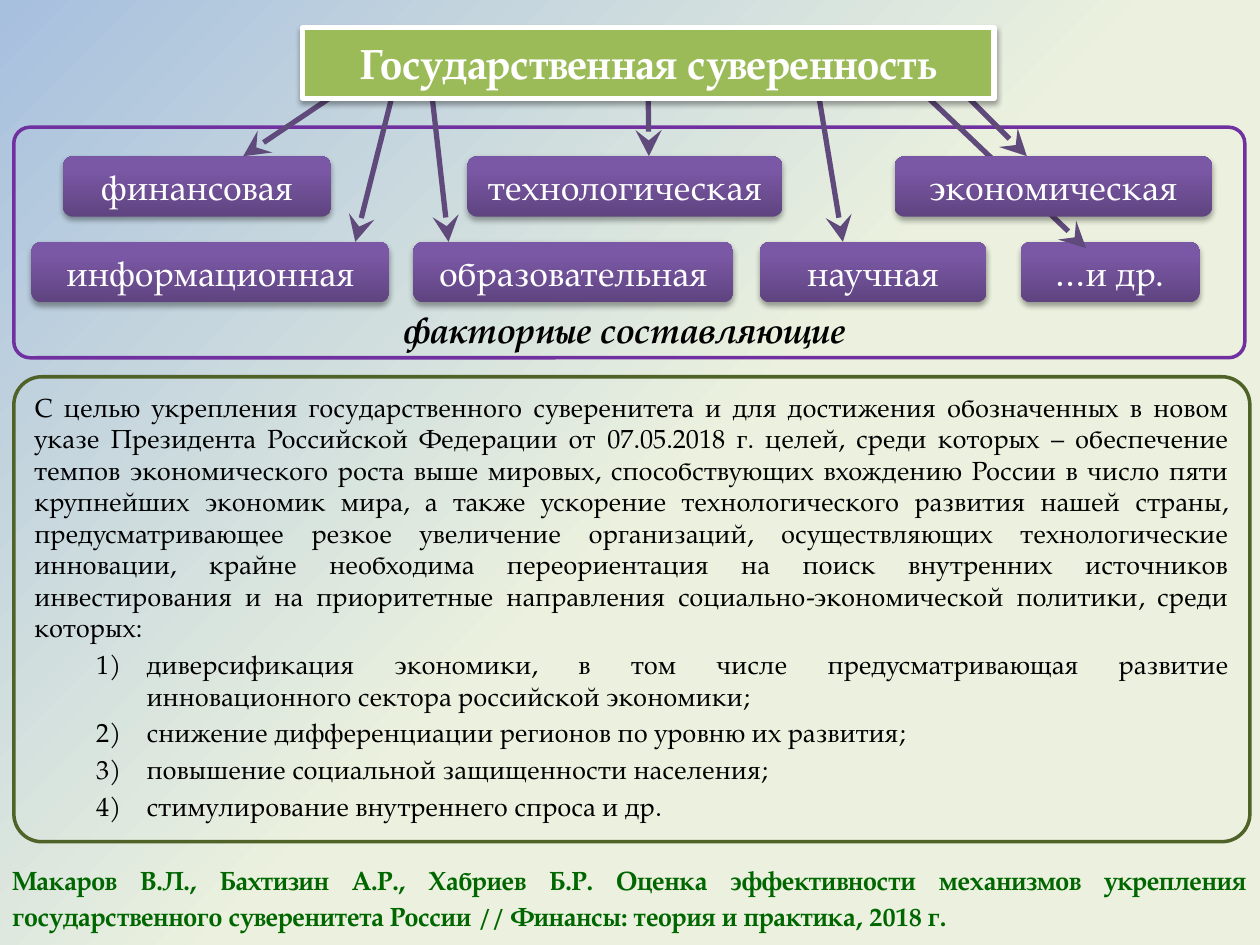
import pptx
import pptx.dml.color
import pptx.enum.shapes
import pptx.enum.text
import pptx.oxml.ns
import pptx.util

RGBColor = pptx.dml.color.RGBColor
SHAPE = pptx.enum.shapes.MSO_SHAPE
ALIGN = pptx.enum.text.PP_ALIGN
ANCHOR = pptx.enum.text.MSO_ANCHOR

WHITE = RGBColor(0xFF, 0xFF, 0xFF)
BLACK = RGBColor(0x00, 0x00, 0x00)
SKY = RGBColor(0xA7, 0xC0, 0xDE)
CREAM = RGBColor(0xEB, 0xF1, 0xDE)
GREEN = RGBColor(0x9B, 0xBB, 0x59)
OLIVE = RGBColor(0x4F, 0x62, 0x28)
CITATION = RGBColor(0x00, 0x66, 0x00)
VIOLET = RGBColor(0x70, 0x30, 0xA0)
PURPLE_DARK = RGBColor(0x5F, 0x44, 0x80)
PURPLE_LIGHT = RGBColor(0x7B, 0x58, 0xA6)
ARROW = RGBColor(0x60, 0x4A, 0x7B)

TITLE_BOTTOM, UPPER, LOWER = 7.7, 12.4, 19.2
FACTORS = [
    ("финансовая", 5, UPPER, 21.3),
    ("технологическая", 37.1, UPPER, 25),
    ("информационная", 2.5, LOWER, 28.4),
    ("образовательная", 32.8, LOWER, 25.4),
    ("научная", 60.3, LOWER, 18),
    ("…и др.", 81, LOWER, 14.2),
]
ARROWS = [
    (26.3, 19.3, UPPER),
    (31.1, 28.2, LOWER),
    (76.8, 81.5, UPPER),
    (65, 66.9, LOWER),
    (34.3, 35.6, LOWER),
    (73.6, 86.2, 19.7),
]
GOAL = (
    "С целью укрепления государственного суверенитета и для достижения обозначенных "
    "в новом указе Президента Российской Федерации от 07.05.2018 г. целей, среди которых "
    "– обеспечение темпов экономического роста выше мировых, способствующих вхождению "
    "России в число пяти крупнейших экономик мира, а также ускорение технологического "
    "развития нашей страны, предусматривающее резкое увеличение организаций, "
    "осуществляющих технологические инновации, крайне необходима переориентация на поиск "
    "внутренних источников инвестирования и на приоритетные направления "
    "социально-экономической политики, среди которых:"
)
DIRECTIONS = [
    "диверсификация экономики, в том числе предусматривающая развитие "
    "инновационного сектора российской экономики;",
    "снижение дифференциации регионов по уровню их развития;",
    "повышение социальной защищенности населения;",
    "стимулирование внутреннего спроса и др.",
]
SOURCE = (
    "Макаров В.Л., Бахтизин А.Р., Хабриев Б.Р. Оценка эффективности механизмов укрепления "
    "государственного суверенитета России // Финансы: теория и практика, 2018 г."
)


class Deck:
    """Holds the style and the current slide, measured on a 100 by 75 grid."""

    font = "TeX Gyre Pagella"
    cols, rows = 100, 75

    def __init__(self):
        self.prs = pptx.Presentation()
        self.prs.slide_width = pptx.util.Inches(10)
        self.prs.slide_height = pptx.util.Inches(7.5)
        self.s = self.prs.slides.add_slide(self.prs.slide_layouts[5])
        self.gradient(self.s.background.fill, (0, SKY), (0.53, CREAM), 315)

    def x(self, col):
        return round(self.prs.slide_width * col / self.cols)

    def y(self, row):
        return round(self.prs.slide_height * row / self.rows)

    def area(self, col, row, width, height):
        return self.x(col), self.y(row), self.x(width), self.y(height)

    def add_xml(self, parent, tag, **attrs):
        child = parent.makeelement(pptx.oxml.ns.qn(tag), attrs)
        parent.append(child)
        return child

    def gradient(self, fill, first, last, angle):
        fill.gradient()
        fill.gradient_angle = angle
        for stop, (position, color) in zip(fill.gradient_stops, (first, last)):
            stop.position = position
            stop.color.rgb = color

    def shadow(self, sp):
        sp.shadow.inherit = False
        effects = sp._element.spPr.find(pptx.oxml.ns.qn("a:effectLst"))
        outer = self.add_xml(effects, "a:outerShdw", blurRad="40000", dist="23000",
                             dir="5400000", rotWithShape="0")
        color = self.add_xml(outer, "a:srgbClr", val="000000")
        self.add_xml(color, "a:alpha", val="35000")

    def set_text(self, sp, text, size, color, align=ALIGN.CENTER, bold=False, italic=False):
        tf = sp.text_frame
        tf.word_wrap = True
        tf.auto_size = pptx.enum.text.MSO_AUTO_SIZE.NONE
        tf.text = text
        for p in tf.paragraphs:
            p.alignment = align
            for r in p.runs:
                r.font.name = self.font
                r.font.size = pptx.util.Pt(size)
                r.font.color.rgb = color
                r.font.bold = bold
                r.font.italic = italic
        return tf

    def title(self, text, *area):
        sp = self.s.shapes.title
        sp.left, sp.top, sp.width, sp.height = self.area(*area)
        geometry = self.add_xml(sp._element.spPr, "a:prstGeom", prst="roundRect")
        self.add_xml(geometry, "a:avLst")
        sp.fill.solid()
        sp.fill.fore_color.rgb = GREEN
        sp.line.color.rgb = WHITE
        sp.line.width = pptx.util.Pt(3)
        self.shadow(sp)
        self.set_text(sp, text, 24, WHITE, bold=True).vertical_anchor = ANCHOR.MIDDLE
        return sp

    def frame(self, color, rounding, *area):
        sp = self.s.shapes.add_shape(SHAPE.ROUNDED_RECTANGLE, *self.area(*area))
        sp.adjustments[0] = rounding
        sp.shadow.inherit = False
        sp.fill.background()
        sp.line.color.rgb = color
        sp.line.width = pptx.util.Pt(2)
        return sp

    def factor(self, text, col, row, width):
        sp = self.s.shapes.add_shape(SHAPE.ROUNDED_RECTANGLE, *self.area(col, row, width, 4.8))
        self.gradient(sp.fill, (0, PURPLE_DARK), (0.8, PURPLE_LIGHT), 90)
        sp.line.fill.background()
        self.shadow(sp)
        self.set_text(sp, text, 20, WHITE)

    def arrow(self, start, end, row):
        sp = self.s.shapes.add_connector(
            pptx.enum.shapes.MSO_CONNECTOR.STRAIGHT,
            self.x(start), self.y(TITLE_BOTTOM), self.x(end), self.y(row))
        sp.line.color.rgb = ARROW
        sp.line.width = pptx.util.Pt(3)
        spPr = sp._element.spPr
        self.add_xml(spPr.find(pptx.oxml.ns.qn("a:ln")), "a:tailEnd",
                     type="stealth", w="lg", len="lg")
        self.add_xml(spPr, "a:effectLst")
        return sp

    def text(self, text, size, color, *area, **style):
        sp = self.s.shapes.add_textbox(*self.area(*area))
        return self.set_text(sp, text, size, color, **style)

    def numbered(self, sp, intro, items):
        tf = self.set_text(sp, "\n".join([intro, *items]), 15, BLACK, ALIGN.JUSTIFY)
        tf.vertical_anchor = ANCHOR.TOP
        for p in tf.paragraphs[1:]:
            p.space_before = pptx.util.Pt(3)
            pPr = p._p.get_or_add_pPr()
            pPr.set("marL", str(self.x(8.9)))
            pPr.set("indent", str(-self.x(4)))
            self.add_xml(pPr, "a:buFont", typeface="+mj-lt")
            self.add_xml(pPr, "a:buAutoNum", type="arabicParenR")

    def bring_to_front(self, sp):
        sp._element.getparent().append(sp._element)


def main():
    deck = Deck()
    title = deck.title("Государственная суверенность", 24, 2.2, 54.9, 5.6)
    deck.frame(VIOLET, 0.07, 1.1, 10.1, 97.7, 18.3)
    deck.text("факторные составляющие", 20, BLACK, 28.9, 24, 41.3, 4.4, bold=True, italic=True)
    for factor in FACTORS:
        deck.factor(*factor)
    deck.arrow(51.5, 51.5, UPPER).begin_connect(title, 2)
    for arrow in ARROWS:
        deck.arrow(*arrow)
    deck.factor("экономическая", 71, UPPER, 25.2)
    source = deck.text(SOURCE, 15, CITATION, 0, 67.7, 100, 6.8, align=ALIGN.JUSTIFY, bold=True)
    source.paragraphs[0].line_spacing = 1.15
    panel = deck.frame(OLIVE, 0.06, 1.1, 29.9, 98.1, 36.9)
    deck.numbered(panel, GOAL, DIRECTIONS)
    deck.bring_to_front(title)
    deck.prs.save("out.pptx")


if __name__ == "__main__":
    main()
